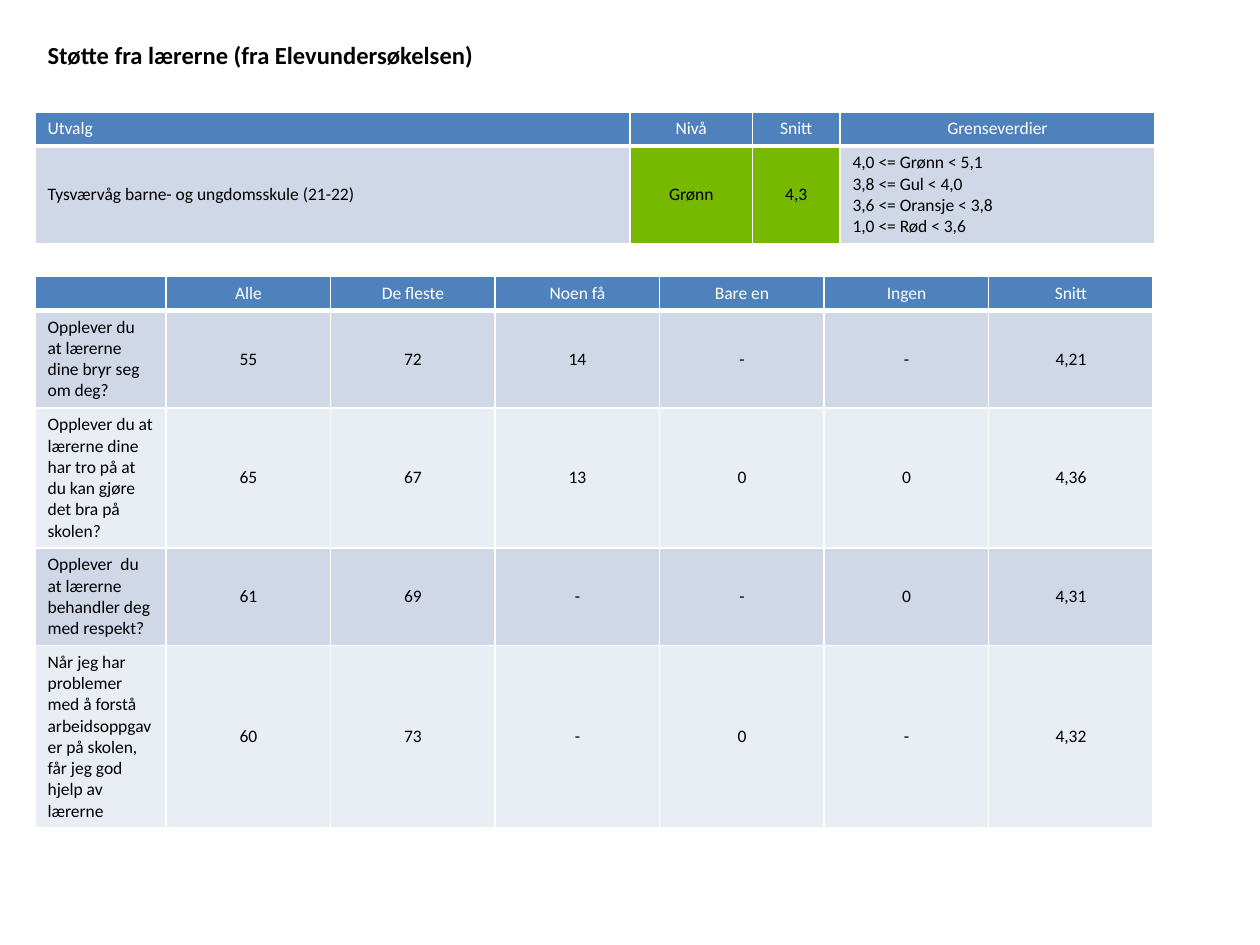
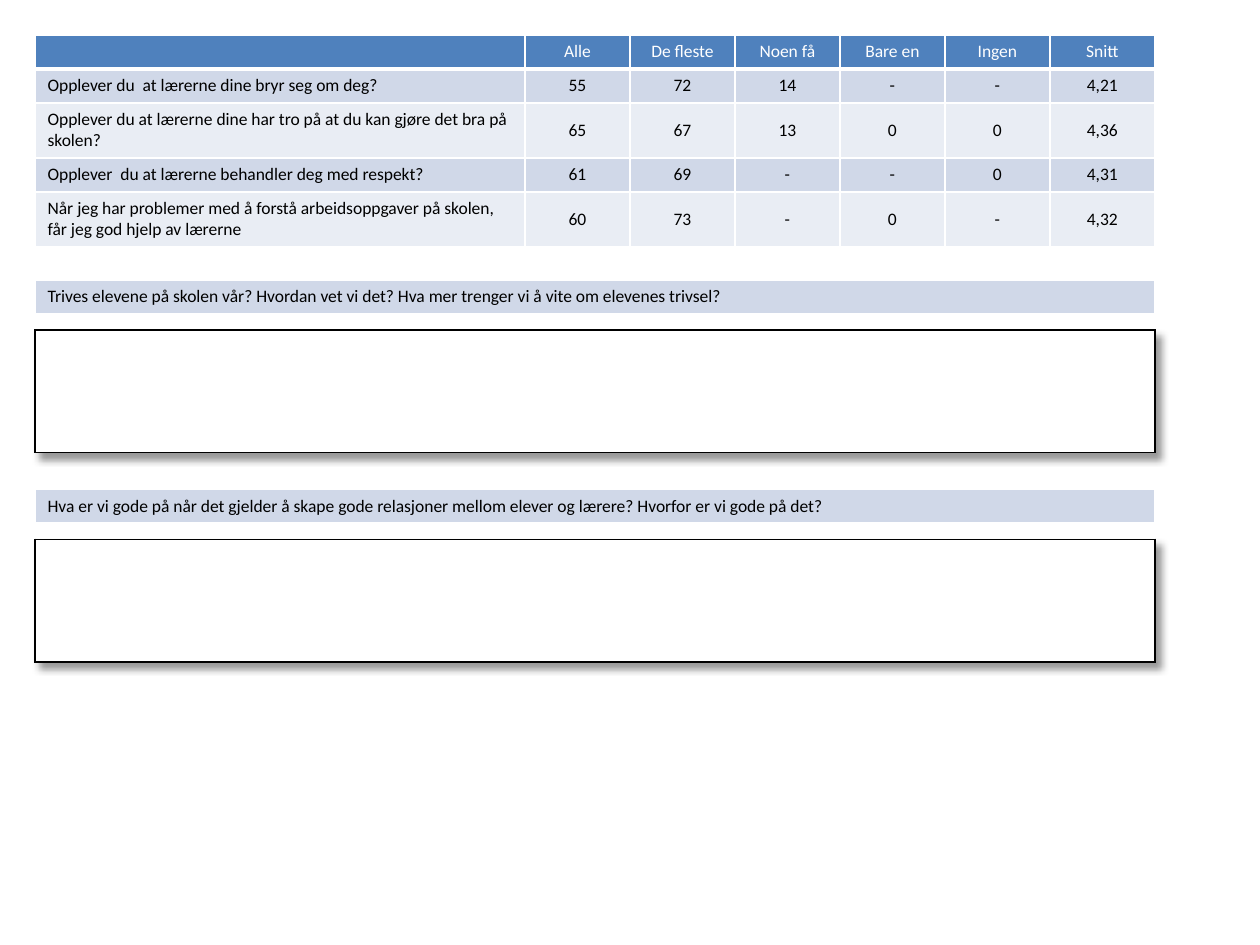
from copy import deepcopy
from dataclasses import dataclass

from lxml import etree
from pptx import Presentation
from pptx.dml.color import RGBColor
from pptx.enum.text import MSO_ANCHOR, PP_ALIGN
from pptx.oxml.ns import qn
from pptx.util import Pt

LEFT, CENTER = PP_ALIGN.LEFT, PP_ALIGN.CENTER
MIDDLE = MSO_ANCHOR.MIDDLE

BLACK = RGBColor(0x00, 0x00, 0x00)
WHITE = RGBColor(0xFF, 0xFF, 0xFF)
HEADER_BLUE = RGBColor(0x4F, 0x81, 0xBD)
BAND_DARK = RGBColor(0xD0, 0xD8, 0xE8)
BAND_LIGHT = RGBColor(0xE9, 0xED, 0xF4)
LEVEL_GREEN = RGBColor(0x77, 0xB8, 0x00)

FONT = "Calibri"
MARGIN = 20
WIDTH = 640
ROW_HEIGHT = 18
THIN, THICK = 1, 3
PROMPT_TOP, PROMPT_STEP, PROMPT_HEIGHT = 160, 119.5, 19.4
BOX_OFFSET, BOX_HEIGHT = 28.7, 70

TITLE = "Støtte fra lærerne (fra Elevundersøkelsen)"
LIMITS = "4,0 <= Grønn < 5,1\n3,8 <= Gul < 4,0\n3,6 <= Oransje < 3,8\n1,0 <= Rød < 3,6"
SUMMARY = [
    ["Utvalg", "Nivå", "Snitt", "Grenseverdier"],
    ["Tysværvåg barne- og ungdomsskule (21-22)", "Grønn", "4,3", LIMITS],
]
ANSWERS = [
    ["", "Alle", "De fleste", "Noen få", "Bare en", "Ingen", "Snitt"],
    ["Opplever du  at lærerne dine bryr seg om deg?",
     "55", "72", "14", "-", "-", "4,21"],
    ["Opplever du at lærerne dine har tro på at du kan gjøre det bra på skolen?",
     "65", "67", "13", "0", "0", "4,36"],
    ["Opplever  du at lærerne behandler deg med respekt?",
     "61", "69", "-", "-", "0", "4,31"],
    ["Når jeg har problemer med å forstå arbeidsoppgaver på skolen, "
     "får jeg god hjelp av lærerne",
     "60", "73", "-", "0", "-", "4,32"],
]
PROMPTS = [
    "Trives elevene på skolen vår? Hvordan vet vi det? "
    "Hva mer trenger vi å vite om elevenes trivsel?",
    "Hva er vi gode på når det gjelder å skape gode relasjoner "
    "mellom elever og lærere? Hvorfor er vi gode på det?",
]


@dataclass
class Grid:
    top: float
    height: float
    columns: list[float]
    rows: list[list[str]]
    header: bool = True
    row_height: float = ROW_HEIGHT
    fill: RGBColor = BAND_DARK
    border: RGBColor = WHITE
    size: float = 10
    bold: bool = False


def write_text(p, text: str, *, size: float = 10, color: RGBColor = BLACK,
               bold: bool = False, align=LEFT) -> None:
    p.alignment = align
    if not text:
        etree.SubElement(p._p, qn("a:endParaRPr"), sz=str(size * 100))
        return
    p.text = text
    for r in p.runs:
        r.font.name = FONT
        r.font.size = Pt(size)
        r.font.bold = bold
        r.font.color.rgb = color
    for br in p._p.findall(qn("a:br")):
        br.append(deepcopy(p.runs[0].font._element))


def set_borders(cell, color: RGBColor, top: float, bottom: float) -> None:
    tc_pr = cell._tc.get_or_add_tcPr()
    sides = {"lnL": THIN, "lnR": THIN, "lnT": top, "lnB": bottom}
    for i, (side, width) in enumerate(sides.items()):
        ln = etree.Element(qn(f"a:{side}"), w=str(Pt(width)))
        solid = etree.SubElement(ln, qn("a:solidFill"))
        etree.SubElement(solid, qn("a:srgbClr"), val=str(color))
        tc_pr.insert(i, ln)


def add_grid(slide, grid: Grid):
    frame = slide.shapes.add_table(
        len(grid.rows), len(grid.columns), Pt(MARGIN), Pt(grid.top),
        Pt(sum(grid.columns)), Pt(grid.height))
    table = frame.table
    table.first_row = table.horz_banding = False
    for column, width in zip(table.columns, grid.columns):
        column.width = Pt(width)
    for i, row in enumerate(grid.rows):
        table.rows[i].height = Pt(grid.row_height)
        is_header = grid.header and i == 0
        if is_header:
            fill = HEADER_BLUE
        else:
            fill = BAND_LIGHT if i and i % 2 == 0 else grid.fill
        for j, text in enumerate(row):
            cell = table.cell(i, j)
            cell.vertical_anchor = MIDDLE
            cell.fill.solid()
            cell.fill.fore_color.rgb = fill
            set_borders(cell, grid.border,
                        THICK if grid.header and i == 1 else THIN,
                        THICK if is_header else THIN)
            write_text(cell.text_frame.paragraphs[0], text, size=grid.size,
                       color=WHITE if is_header else BLACK, bold=grid.bold,
                       align=CENTER if j else LEFT)
    frame.height = Pt(grid.height)
    return table


def add_shadow(table) -> None:
    effects = etree.Element(qn("a:effectLst"))
    shadow = etree.SubElement(
        effects, qn("a:outerShdw"), blurRad=str(Pt(4)), dist=str(Pt(4)),
        dir="2700000", algn="tl", rotWithShape="0")
    color = etree.SubElement(shadow, qn("a:srgbClr"), val=str(BLACK))
    etree.SubElement(color, qn("a:alpha"), val="40000")
    table._tbl.tblPr.insert(0, effects)


def build_results(slide) -> None:
    add_grid(slide, Grid(MARGIN, 24, [WIDTH], [[TITLE]], header=False,
                         fill=WHITE, size=14, bold=True))
    summary = add_grid(slide, Grid(64, 74, [340, 70, 50, 180], SUMMARY))
    for j in (1, 2):
        summary.cell(1, j).fill.fore_color.rgb = LEVEL_GREEN
    summary.cell(1, 3).text_frame.paragraphs[0].alignment = LEFT
    add_grid(slide, Grid(158, 312, [75] + [94] * 6, ANSWERS))


def build_reflection(slide) -> None:
    add_grid(slide, Grid(MARGIN, 120, [280] + [60] * 6, ANSWERS))
    for i, prompt in enumerate(PROMPTS):
        top = PROMPT_TOP + i * PROMPT_STEP
        add_grid(slide, Grid(top, PROMPT_HEIGHT, [WIDTH], [[prompt]], header=False))
        box = add_grid(slide, Grid(
            top + BOX_OFFSET, BOX_HEIGHT, [WIDTH], [[""]], header=False,
            row_height=BOX_HEIGHT, fill=WHITE, border=BLACK))
        add_shadow(box)


def main() -> None:
    prs = Presentation()
    prs.slide_width, prs.slide_height = Pt(720), Pt(540)
    for build in (build_results, build_reflection):
        build(prs.slides.add_slide(prs.slide_layouts[6]))
    prs.save("out.pptx")


if __name__ == "__main__":
    main()
